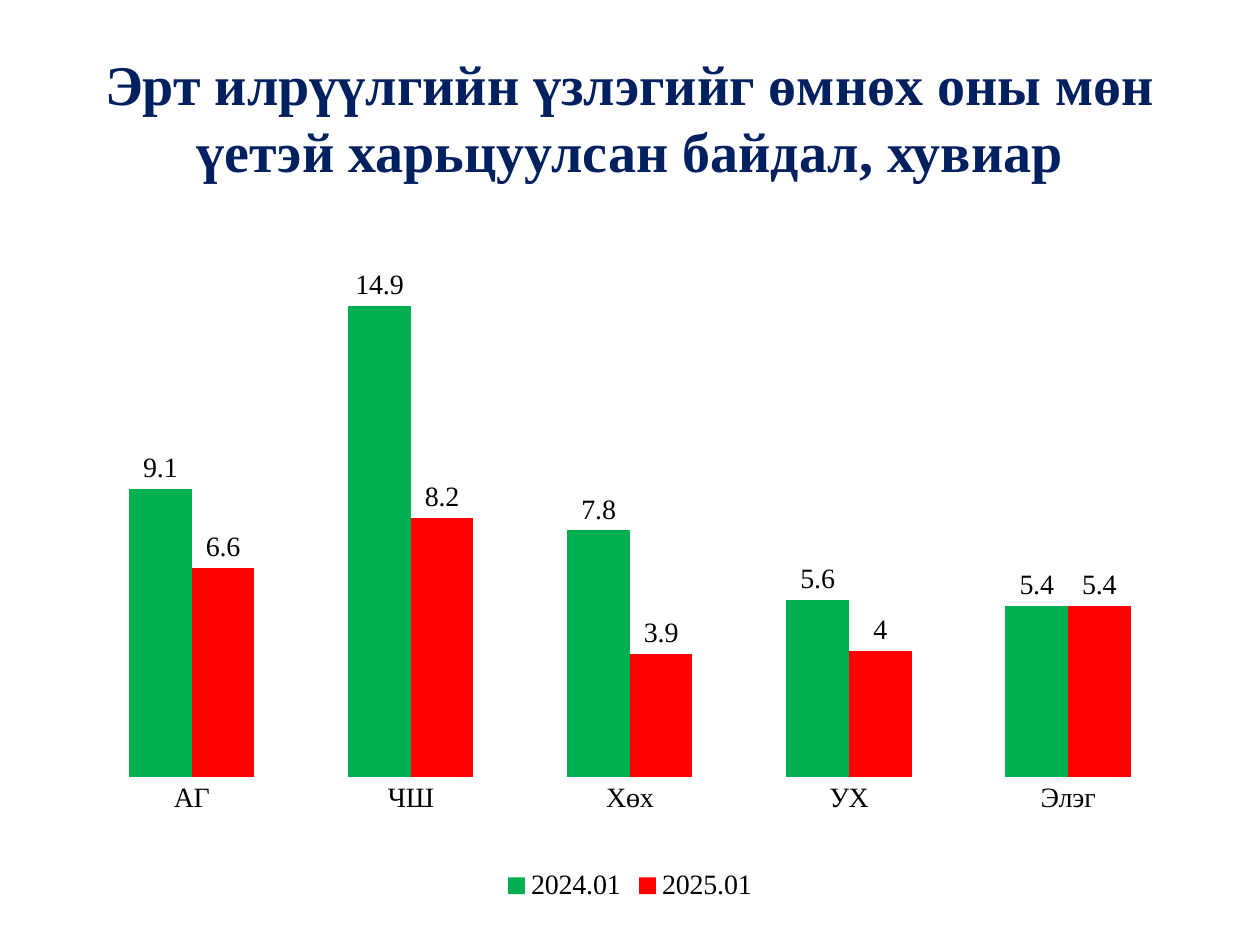
"""Build a slide comparing early detection rates by year in a column chart."""
from lxml.etree import SubElement
from pptx import Presentation
from pptx.chart.data import CategoryChartData
from pptx.dml.color import RGBColor
from pptx.enum.chart import XL_CHART_TYPE as ChartType
from pptx.enum.chart import XL_LABEL_POSITION as LabelPosition
from pptx.enum.chart import XL_LEGEND_POSITION as LegendPosition
from pptx.enum.chart import XL_TICK_MARK as TickMark
from pptx.enum.text import MSO_ANCHOR, MSO_AUTO_SIZE, PP_ALIGN
from pptx.oxml.ns import qn
from pptx.util import Pt

NAVY = RGBColor(0x00, 0x20, 0x60)
GREEN = RGBColor(0x00, 0xB0, 0x50)
RED = RGBColor(0xFF, 0x00, 0x00)
BLACK = RGBColor(0x00, 0x00, 0x00)
FONT = "Times New Roman"


def style_font(font, size, color, bold=False):
    font.name = FONT
    font.size = Pt(size)
    font.bold = bold
    font.color.rgb = color


deck = Presentation()
deck.slide_width, deck.slide_height = Pt(720), Pt(540)
page = deck.slides.add_slide(deck.slide_layouts[5])

title = page.shapes.title
title.left, title.top, title.width, title.height = Pt(36), Pt(21.6), Pt(648), Pt(90)
frame = title.text_frame
frame.word_wrap = True
frame.auto_size = MSO_AUTO_SIZE.NONE
frame.vertical_anchor = MSO_ANCHOR.MIDDLE
para = frame.paragraphs[0]
para.alignment = PP_ALIGN.CENTER
span = para.add_run()
span.text = "Эрт илрүүлгийн үзлэгийг өмнөх оны мөн үетэй харьцуулсан байдал, хувиар"
style_font(span.font, 32, NAVY, bold=True)

rates = CategoryChartData()
rates.categories = ["АГ", "ЧШ", "Хөх", "УХ", "Элэг"]
rates.add_series("2024.01", [9.1, 14.9, 7.8, 5.6, 5.4])
rates.add_series("2025.01", [6.6, 8.2, 3.9, 4, 5.4])
chart = page.shapes.add_chart(
    ChartType.COLUMN_CLUSTERED, Pt(36), Pt(144), Pt(648), Pt(374.4), rates
).chart
chart.has_title = False
style_font(chart.font, 16, BLACK)

chart.has_legend = True
chart.legend.position = LegendPosition.BOTTOM
chart.legend.include_in_layout = False
style_font(chart.legend.font, 16, BLACK)

category_axis = chart.category_axis
category_axis.major_tick_mark = TickMark.NONE
category_axis.format.line.fill.background()
style_font(category_axis.tick_labels.font, 16, BLACK)

value_axis = chart.value_axis
value_axis.minimum_scale, value_axis.maximum_scale = 0, 16
value_axis.has_major_gridlines = False
value_axis.visible = False

plot = chart.plots[0]
plot.gap_width = 150
plot.overlap = 0
plot.vary_by_categories = False
for series, color in zip(plot.series, (GREEN, RED)):
    series.format.fill.solid()
    series.format.fill.fore_color.rgb = color
    labels = series.data_labels
    labels.show_value = True
    labels.position = LabelPosition.OUTSIDE_END
    style_font(labels.font, 16, BLACK)

plot_area = chart.element.chart.plotArea
for old_layout in plot_area.findall(qn("c:layout")):
    plot_area.remove(old_layout)
layout = SubElement(plot_area, qn("c:layout"))
plot_area.insert(0, layout)
manual = SubElement(layout, qn("c:manualLayout"))
for tag, value in (
    ("layoutTarget", "inner"), ("xMode", "edge"), ("yMode", "edge"),
    ("x", "0.017"), ("y", "0.029"), ("w", "0.966"), ("h", "0.773"),
):
    SubElement(manual, qn(f"c:{tag}")).set("val", value)

deck.save("out.pptx")
